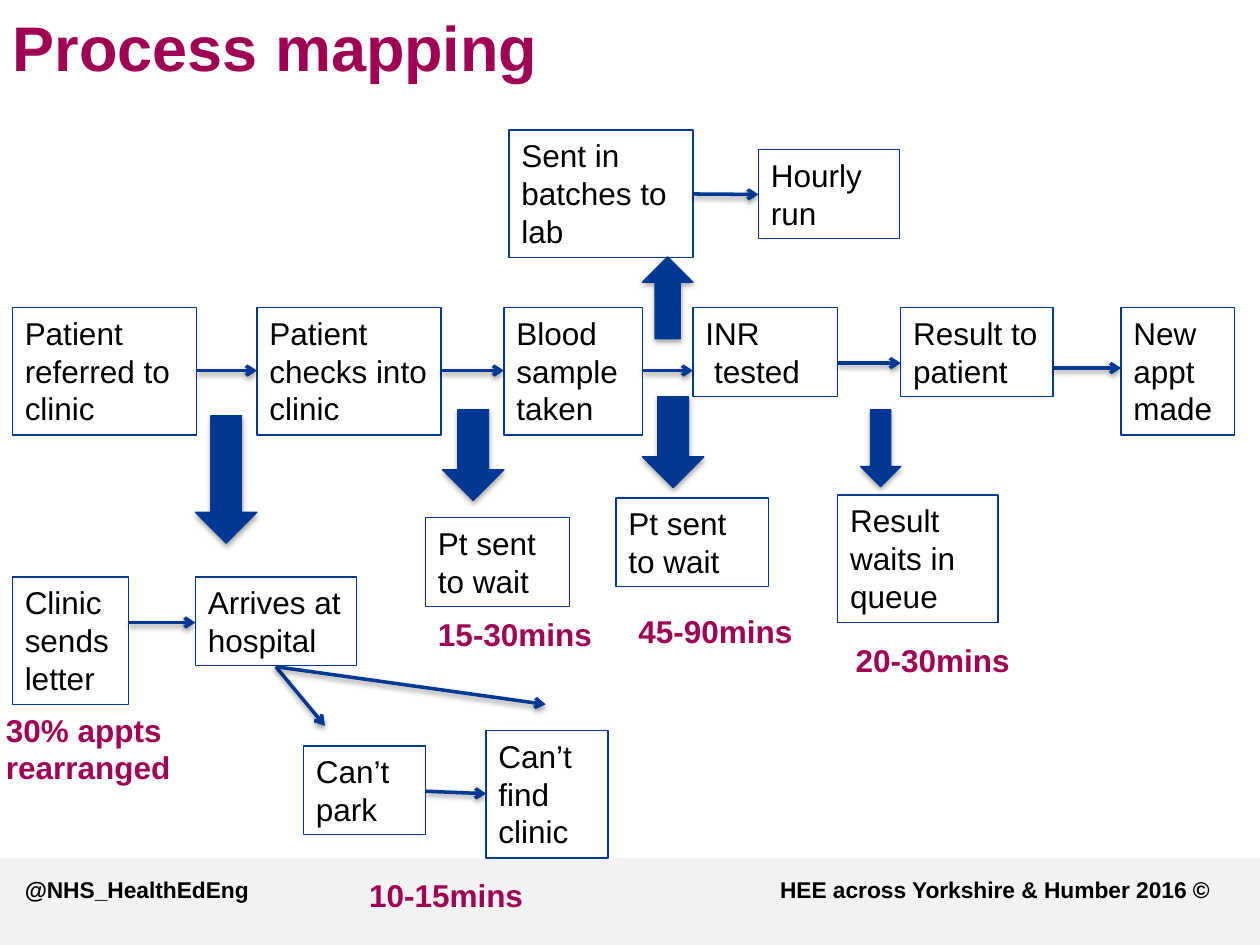
import itertools

import lxml.etree
import pptx
import pptx.dml.color
import pptx.enum.shapes
import pptx.enum.text
import pptx.oxml.ns
import pptx.util

Cm = pptx.util.Cm
Pt = pptx.util.Pt
PRESETS = pptx.enum.shapes.MSO_SHAPE
ANCHOR = pptx.enum.text.MSO_ANCHOR
ALIGN = pptx.enum.text.PP_ALIGN

BLUE, PLUM, BLACK, PALE_GREY = "003893", "A00054", "000000", "F2F2F2"
BOX_HEIGHTS = {2: 1.79, 3: 2.57}  # by number of text lines
STEP_TOP = 6.2

# Main pathway: left, width, lines, text
STEPS = [
    (0.25, 3.71, 3, "Patient referred to clinic"),
    (5.18, 3.71, 3, "Patient checks into clinic"),
    (10.16, 2.79, 3, "Blood sample taken"),
    (13.97, 2.92, 2, "INR\n tested"),
    (18.16, 3.07, 2, "Result to patient"),
    (22.6, 2.29, 3, "New appt made"),
]
STEP_ARROW_YS = [7.47, 7.47, 7.47, 7.32, 7.42]

# Side steps: left, top, width, lines, text
SIDE_STEPS = [
    (0.25, 11.63, 2.34, 3, "Clinic\nsends letter"),
    (3.94, 11.63, 3.25, 2, "Arrives at hospital"),
    (6.12, 15.04, 2.46, 2, "Can’t park"),
    (9.8, 14.73, 2.46, 3, "Can’t find clinic"),
    (8.58, 10.44, 2.9, 2, "Pt sent to wait"),
    (12.42, 10.04, 3.07, 2, "Pt sent to wait"),
    (10.26, 2.62, 3.71, 3, "Sent in batches to lab"),
    (15.29, 3.02, 2.84, 2, "Hourly run"),
    (16.89, 9.98, 3.23, 3, "Result waits in queue"),
]

# Thin arrows between side steps: start x, start y, end x, end y
SIDE_ARROWS = [
    (2.59, 12.55, 3.94, 12.55),
    (5.56, 13.44, 6.55, 14.63),
    (5.56, 13.44, 11, 14.2),
    (8.58, 15.95, 9.8, 16),
    (13.97, 3.91, 15.29, 3.92),
]

# Block arrows: preset, left, top, width, height
BLOCK_ARROWS = [
    (PRESETS.DOWN_ARROW, 3.94, 8.38, 1.24, 2.57),
    (PRESETS.DOWN_ARROW, 8.92, 8.26, 1.24, 1.83),
    (PRESETS.DOWN_ARROW, 12.95, 8, 1.24, 1.83),
    (PRESETS.UP_ARROW, 12.95, 5.18, 1.02, 1.65),
    (PRESETS.DOWN_ARROW, 17.35, 8.26, 0.81, 1.55),
]

# Delays: left, top, width, height, text
DELAYS = [
    (-0.13, 14.2, 4.09, 1.79, "30% appts rearranged"),
    (7.19, 17.53, 3.81, 1.02, "10-15mins"),
    (8.58, 12.27, 3.81, 1.02, "15-30mins"),
    (12.62, 12.22, 3.81, 1.02, "45-90mins"),
    (17, 12.8, 5.26, 1.02, "20-30mins"),
]


def rgb(hex_colour):
    return pptx.dml.color.RGBColor.from_string(hex_colour)


def write(frame, text, size, colour, bold=False, anchor=ANCHOR.TOP):
    frame.text = text
    frame.word_wrap = True
    frame.auto_size = pptx.enum.text.MSO_AUTO_SIZE.NONE
    frame.vertical_anchor = anchor
    for paragraph in frame.paragraphs:
        paragraph.alignment = ALIGN.LEFT
        for run in paragraph.runs:
            run.font.name = "Arial"
            run.font.size = Pt(size)
            run.font.bold = bold
            run.font.color.rgb = rgb(colour)


def add_soft_shadow(properties, opacity):
    effects = properties.find(pptx.oxml.ns.qn("a:effectLst"))
    if effects is None:
        effects = lxml.etree.SubElement(properties, pptx.oxml.ns.qn("a:effectLst"))
    shadow = lxml.etree.SubElement(
        effects, pptx.oxml.ns.qn("a:outerShdw"),
        blurRad="40000", dist="22000", dir="5400000", rotWithShape="0")
    colour = lxml.etree.SubElement(shadow, pptx.oxml.ns.qn("a:srgbClr"), val=BLACK)
    lxml.etree.SubElement(colour, pptx.oxml.ns.qn("a:alpha"), val=str(opacity * 1000))


def add_preset(slide, preset, left, top, width, height, fill=None, line=None):
    preset_shape = slide.shapes.add_shape(
        preset, Cm(left), Cm(top), Cm(width), Cm(height))
    preset_shape.shadow.inherit = False
    if fill:
        preset_shape.fill.solid()
        preset_shape.fill.fore_color.rgb = rgb(fill)
    else:
        preset_shape.fill.background()
    if line:
        preset_shape.line.color.rgb = rgb(line)
        preset_shape.line.width = Pt(0.75)
    else:
        preset_shape.line.fill.background()
    return preset_shape


def add_step(slide, left, top, width, lines, text):
    step = add_preset(slide, PRESETS.RECTANGLE, left, top, width,
                      BOX_HEIGHTS[lines], line=BLUE)
    write(step.text_frame, text, 18, BLACK)


def add_block_arrow(slide, preset, left, top, width, height):
    block_arrow = add_preset(slide, preset, left, top, width, height, BLUE, BLUE)
    add_soft_shadow(block_arrow._element.spPr, 35)


def add_thin_arrow(slide, start_x, start_y, end_x, end_y):
    arrow = slide.shapes.add_connector(
        pptx.enum.shapes.MSO_CONNECTOR.STRAIGHT,
        Cm(start_x), Cm(start_y), Cm(end_x), Cm(end_y))
    arrow.line.color.rgb = rgb(BLUE)
    arrow.line.width = Pt(2)
    lxml.etree.SubElement(
        arrow.line._get_or_add_ln(), pptx.oxml.ns.qn("a:tailEnd"), type="arrow")
    add_soft_shadow(arrow._element.spPr, 38)


def add_label(slide, left, top, width, height, text, size=18, colour=PLUM):
    label = slide.shapes.add_textbox(Cm(left), Cm(top), Cm(width), Cm(height))
    write(label.text_frame, text, size, colour, bold=True)
    return label


def add_title(slide, text):
    title = slide.shapes.title
    title.left, title.top, title.width, title.height = Cm(0), Cm(0), Cm(11.48), Cm(1.88)
    write(title.text_frame, text, 36, PLUM, bold=True, anchor=ANCHOR.MIDDLE)


def add_footer(slide):
    add_preset(slide, PRESETS.RECTANGLE, 0, 17.3, 25.4, 1.75, fill=PALE_GREY)
    footer = add_label(slide, 0.25, 17.53, 24.46, 1.02,
                       "@NHS_HealthEdEng\tHEE across Yorkshire & Humber 2016 ©",
                       13, BLACK)
    # Right-aligned tab for the copyright text
    properties = footer.text_frame.paragraphs[0]._p.get_or_add_pPr()
    tabs = lxml.etree.SubElement(properties, pptx.oxml.ns.qn("a:tabLst"))
    lxml.etree.SubElement(tabs, pptx.oxml.ns.qn("a:tab"),
                          pos=str(Cm(23.88)), algn="r")


def main():
    deck = pptx.Presentation()
    deck.slide_width, deck.slide_height = Cm(25.4), Cm(19.05)
    slide = deck.slides.add_slide(deck.slide_layouts[5])

    add_footer(slide)
    add_title(slide, "Process mapping")

    # Main pathway, each step linked to the next
    for left, width, lines, text in STEPS:
        add_step(slide, left, STEP_TOP, width, lines, text)
    for (step, following), y in zip(itertools.pairwise(STEPS), STEP_ARROW_YS):
        add_thin_arrow(slide, step[0] + step[1], y, following[0], y)

    # Side steps and delays
    for side_step in SIDE_STEPS:
        add_step(slide, *side_step)
    for side_arrow in SIDE_ARROWS:
        add_thin_arrow(slide, *side_arrow)
    for block_arrow in BLOCK_ARROWS:
        add_block_arrow(slide, *block_arrow)
    for delay in DELAYS:
        add_label(slide, *delay)

    deck.save("out.pptx")


if __name__ == "__main__":
    main()
